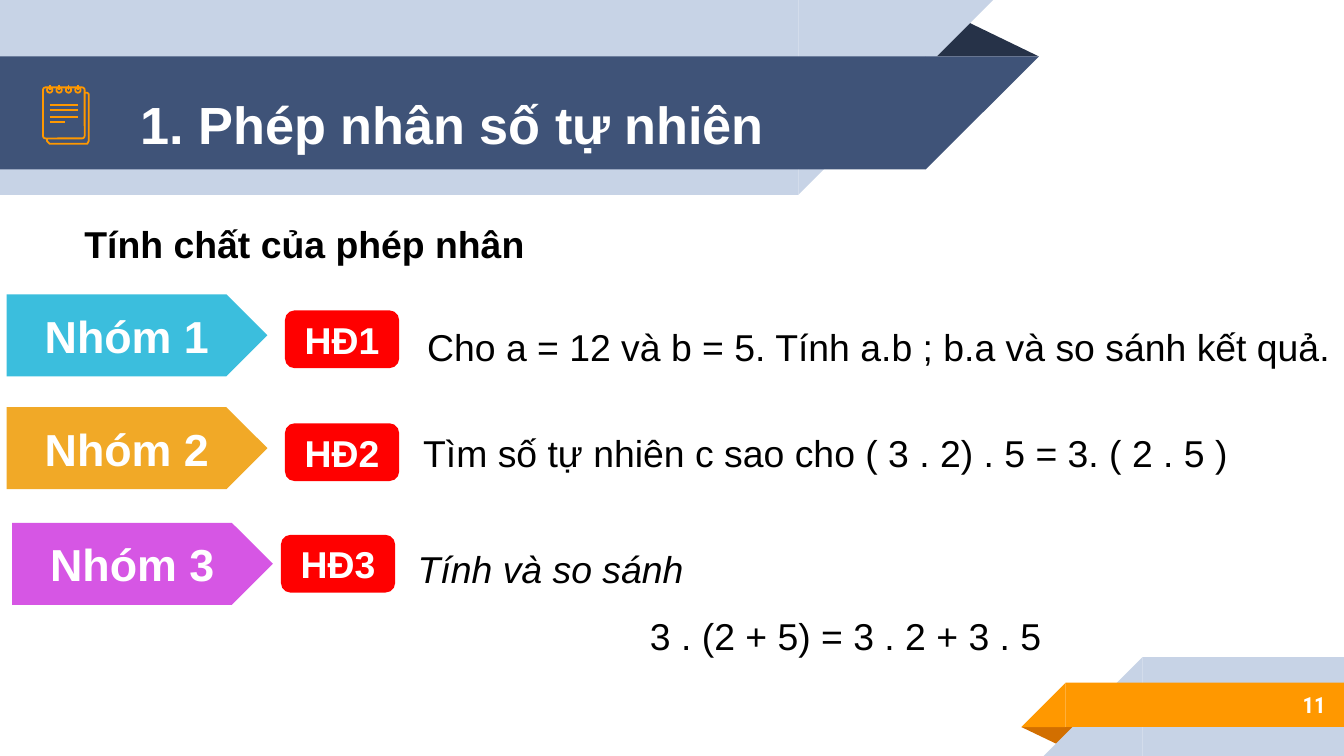
from lxml.etree import SubElement
from pptx import Presentation
from pptx.dml.color import RGBColor
from pptx.enum.shapes import MSO_CONNECTOR, MSO_SHAPE
from pptx.enum.text import MSO_ANCHOR, PP_ALIGN
from pptx.oxml.ns import qn
from pptx.util import Pt

WHITE, BLACK, ORANGE, RED = "FFFFFF", "000000", "FF9800", "FF0000"
NAVY, PALE, INK, RUST = "3F5378", "C7D3E6", "263248", "D26F00"


def color(value):
    """Turn a hex string into a colour."""
    return RGBColor.from_string(value)


class Board:
    """Draws on one slide, in cells of a hundredth of its width."""

    def __init__(self, deck, page):
        """Keep the slide, its cell size and its text style."""
        self.page = page
        self.cell = deck.slide_width / 100
        self.font, self.size, self.stroke = "Arial", 20, Pt(0.96)

    def cells(self, *counts):
        """Convert counts of cells into lengths."""
        return [round(count * self.cell) for count in counts]

    def shape(self, kind, at, fill=None, flip=None, turn=0, adjust=None):
        """Add a filled preset shape, or an outlined one without a fill."""
        shape = self.page.shapes.add_shape(kind, *self.cells(*at))
        shape.rotation = turn
        if adjust is not None:
            shape.adjustments[0] = adjust
        if flip:
            shape._element.spPr.find(qn("a:xfrm")).set(flip, "1")
        self.paint(shape, fill)
        return shape

    def paint(self, shape, fill=None):
        """Give a shape its fill, or the icon's outline."""
        shape.shadow.inherit = False
        if fill:
            shape.fill.solid()
            shape.fill.fore_color.rgb = color(fill)
            shape.line.fill.background()
        else:
            shape.fill.background()
            self.outline(shape)

    def outline(self, shape):
        """Draw the thin orange line of the icon."""
        shape.line.color.rgb = color(ORANGE)
        shape.line.width = self.stroke

    def line(self, *ends):
        """Add a straight line between two points."""
        line = self.page.shapes.add_connector(MSO_CONNECTOR.STRAIGHT, *self.cells(*ends))
        self.outline(line)
        SubElement(line._element.spPr, qn("a:effectLst"))

    def trace(self, points):
        """Add an open outline through the points."""
        start, *rest = [self.cells(*point) for point in points]
        builder = self.page.shapes.build_freeform(*start)
        builder.add_line_segments(rest, close=False)
        self.paint(builder.convert_to_shape())

    def paragraph(self, box, text, tint, align=PP_ALIGN.LEFT, anchor=MSO_ANCHOR.TOP,
                  size=None, bold=False, italic=False, spacing=1, font=None, more=False):
        """Set the first paragraph of a shape, or append one."""
        frame = box.text_frame
        frame.vertical_anchor = anchor
        para = frame.add_paragraph() if more else frame.paragraphs[0]
        para.alignment, para.line_spacing = align, spacing
        span = para.add_run()
        span.text = text
        span.font.name, span.font.size = font or self.font, Pt(size or self.size)
        span.font.bold, span.font.italic = bold, italic
        span.font.color.rgb = color(tint)
        return para

    def label(self, kind, at, fill, text, size):
        """Add a filled shape with centred bold text."""
        self.paragraph(self.shape(kind, at, fill), text, WHITE, PP_ALIGN.CENTER,
                       MSO_ANCHOR.MIDDLE, size, bold=True)

    def text(self, at, wrap=True):
        """Add an empty text box."""
        box = self.page.shapes.add_textbox(*self.cells(*at))
        box.text_frame.word_wrap = wrap
        return box

    def title(self, at, text):
        """Move the title placeholder to the front and fill it."""
        box = self.page.shapes.title
        box.left, box.top, box.width, box.height = self.cells(*at)
        self.page.shapes._spTree.append(box._element)
        self.paragraph(box, text, WHITE, PP_ALIGN.CENTER, size=28, bold=True, spacing=1.5)

    def head_band(self, top, width, height, fill):
        """Add a band from the left edge with a slanted right end."""
        self.shape(MSO_SHAPE.RECTANGLE, (0, top, width, height), fill)
        self.shape(MSO_SHAPE.RIGHT_TRIANGLE, (width, top, height, height), fill, "flipV")

    def foot_band(self, left, top, height, fill):
        """Add a band to the right edge with a slanted left end."""
        self.shape(MSO_SHAPE.RECTANGLE, (left, top, 100 - left, height), fill)
        self.shape(MSO_SHAPE.RIGHT_TRIANGLE, (left - height, top, height, height), fill, "flipH")

    def notepad(self):
        """Draw the notepad icon."""
        self.trace([(3.5, 10.3), (3.5, 10.5), (3.7, 10.7), (6.5, 10.7),
                    (6.6, 10.5), (6.6, 7), (6.5, 6.9), (6.3, 6.9)])
        self.shape(MSO_SHAPE.ROUNDED_RECTANGLE, (3.2, 6.5, 3.1, 3.8), adjust=0.06)
        for ring in range(4):
            middle = 3.7 + 0.7 * ring
            self.shape(MSO_SHAPE.OVAL, (middle - 0.2, 6.5, 0.4, 0.4))
            self.line(middle, 6.3, middle, 6.7)
        for top, end in ((7.8, 5.8), (8.2, 5.8), (8.7, 5.8), (9.1, 4.8)):
            self.line(3.7, top, end, top)


def main():
    """Build the slide and save it."""
    deck = Presentation()
    deck.slide_width, deck.slide_height = Pt(720), Pt(405)
    board = Board(deck, deck.slides.add_slide(deck.slide_layouts[5]))

    board.shape(MSO_SHAPE.ISOSCELES_TRIANGLE, (68.8, 1.4, 8.5, 2.8), INK, adjust=0.32)
    board.head_band(0, 59.4, 14.5, PALE)
    board.head_band(4.2, 68.9, 8.4, NAVY)
    board.shape(MSO_SHAPE.ISOSCELES_TRIANGLE, (76, 54.1, 4.3, 1.4), RUST, turn=180, adjust=0.32)
    board.foot_band(85, 48.9, 7.35, PALE)
    board.foot_band(79.3, 50.8, 3.3, ORANGE)
    board.paragraph(board.text((83.3, 50.7, 16.3, 3.5)), "11", WHITE, PP_ALIGN.RIGHT,
                    MSO_ANCHOR.MIDDLE, 12, bold=True, font="Roboto Condensed")
    board.notepad()
    board.title((6.7, 4, 53.9, 8.1), "1. Phép nhân số tự nhiên")
    board.paragraph(board.text((5.3, 16, 36.3, 4.4)), "Tính chất của phép nhân", BLACK, bold=True)

    groups = [(0.5, 21.9, "3BBEDD", 21.2, 23.1),
              (0.5, 30.3, "F1A927", 21.2, 31.5),
              (0.9, 38.9, "D656E4", 20.9, 39.8)]
    for number, (left, top, fill, badge_left, badge_top) in enumerate(groups, 1):
        board.label(MSO_SHAPE.PENTAGON, (left, top, 19.4, 6.1), fill, f"Nhóm {number}", 24)
        board.label(MSO_SHAPE.ROUNDED_RECTANGLE, (badge_left, badge_top, 8.5, 4.3),
                    RED, f"HĐ{number}", 20)

    first = board.paragraph(board.text((30.8, 22, 69.7, 5.4), wrap=False),
                            "Cho a = 12 và b = 5. Tính a.b ; b.a và so sánh kết quả.",
                            BLACK, PP_ALIGN.JUSTIFY, spacing=1.5)
    first.space_before = first.space_after = Pt(6)
    board.paragraph(board.text((30.5, 31.5, 65.7, 4.4)),
                    "Tìm số tự nhiên c sao cho ( 3 . 2) . 5 = 3. ( 2 . 5 )", BLACK)
    third = board.text((30.1, 38.5, 65.7, 11.1))
    board.paragraph(third, "Tính và so sánh", BLACK, PP_ALIGN.JUSTIFY, italic=True, spacing=1.5)
    board.paragraph(third, "3 . (2 + 5) = 3 . 2 + 3 . 5", BLACK, PP_ALIGN.CENTER,
                    spacing=1.5, more=True)

    deck.save("out.pptx")


if __name__ == "__main__":
    main()
